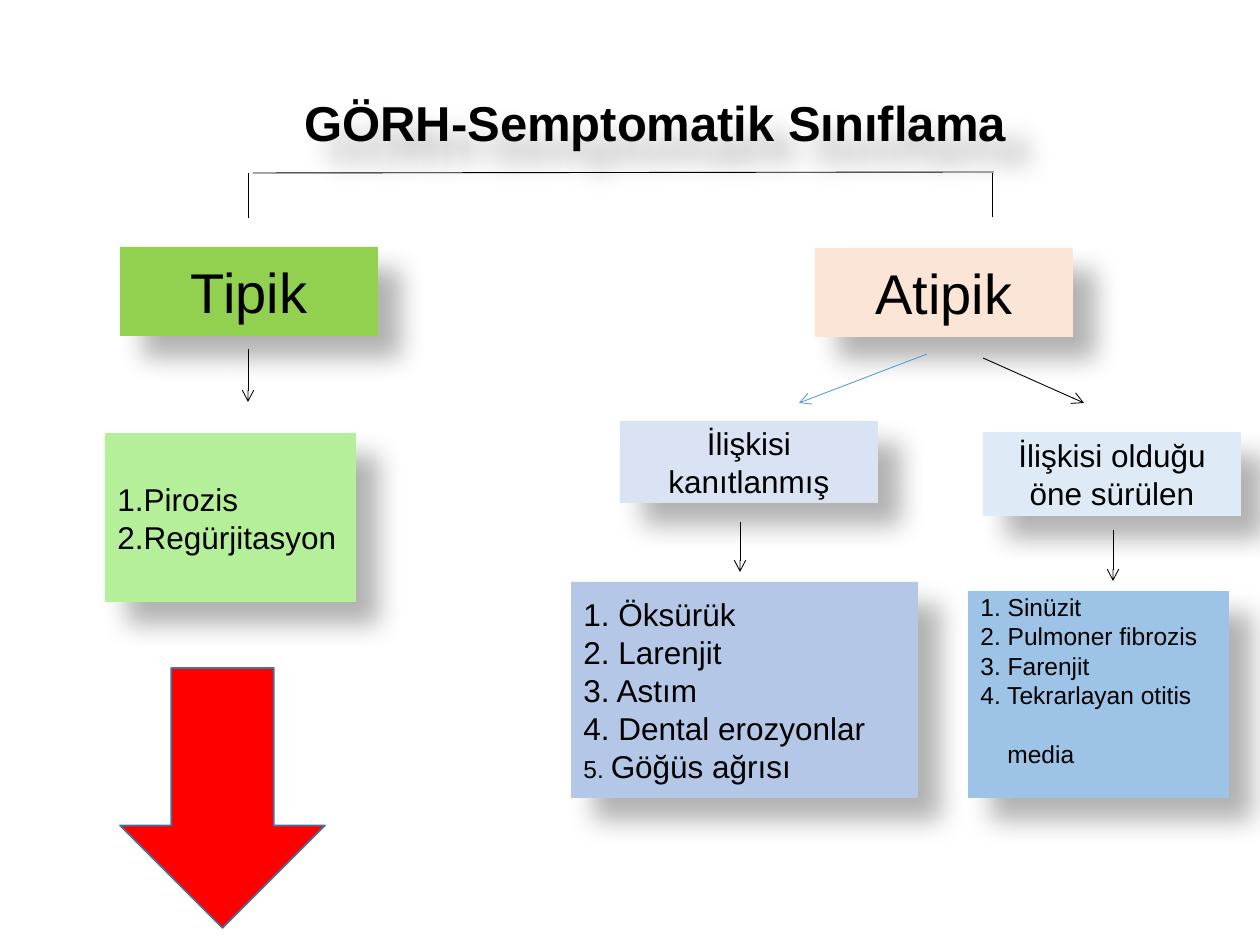
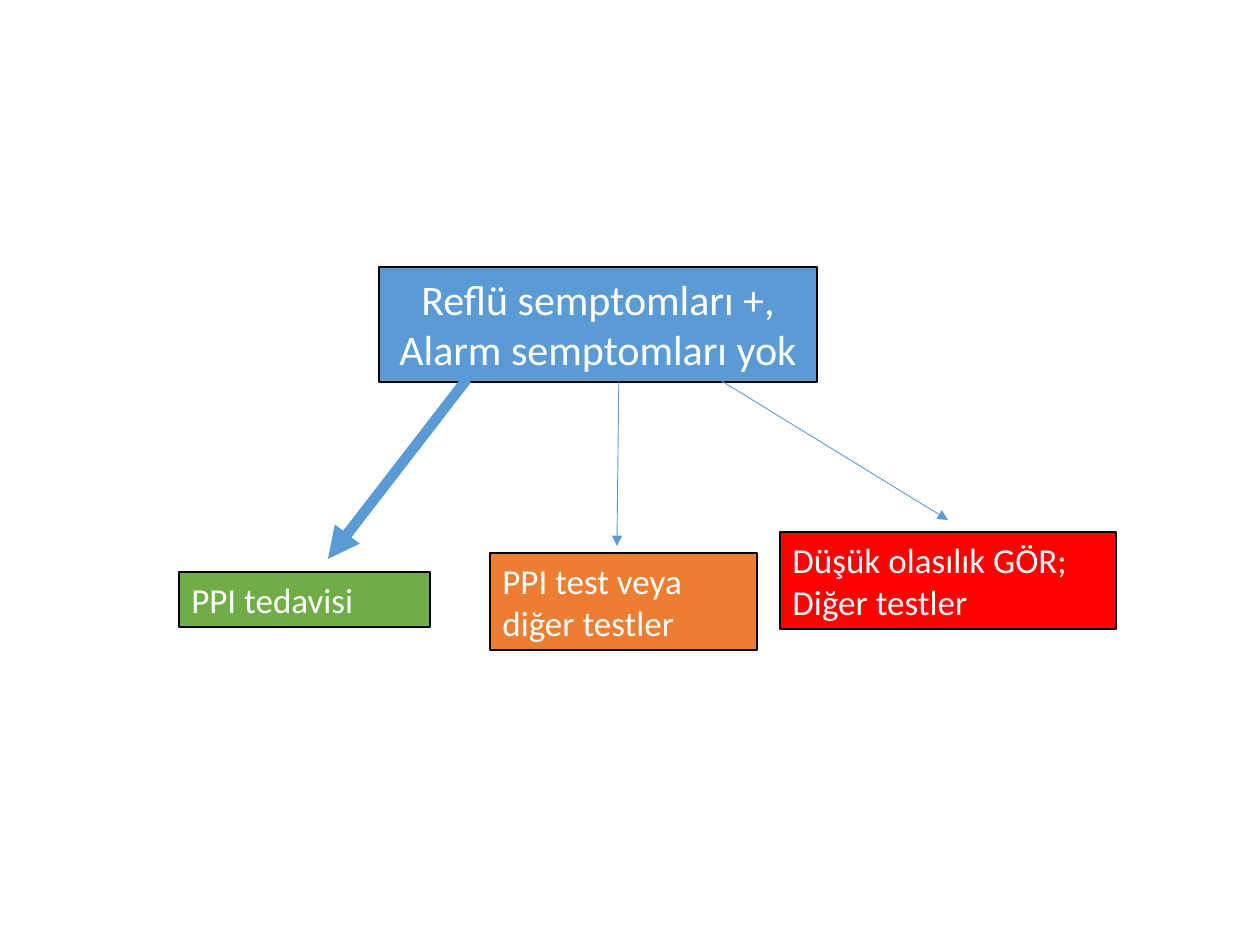
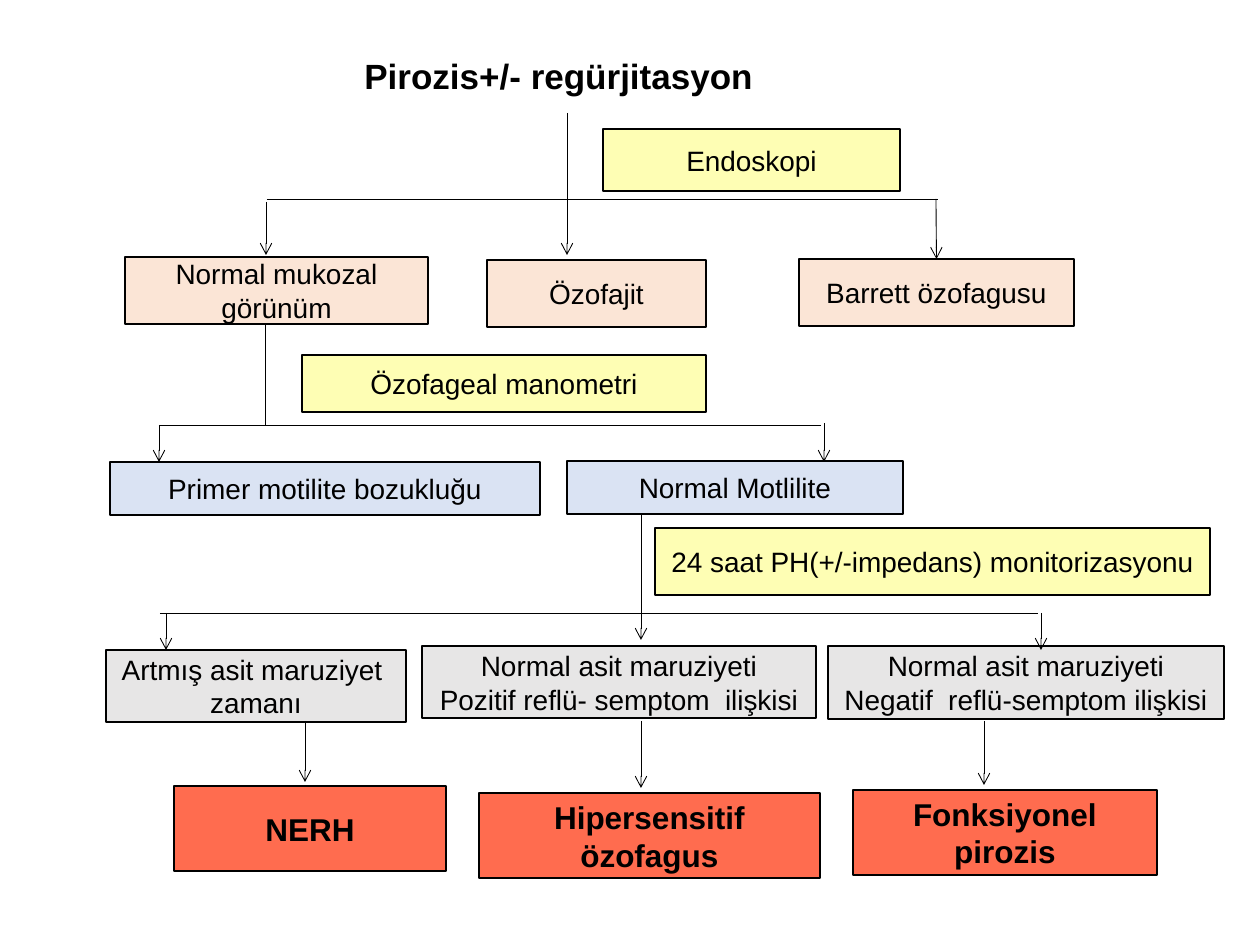
from dataclasses import dataclass

from lxml import etree
from pptx import Presentation
from pptx.dml.color import RGBColor
from pptx.enum.shapes import MSO_CONNECTOR, MSO_SHAPE
from pptx.enum.text import MSO_ANCHOR, MSO_AUTO_SIZE, PP_ALIGN
from pptx.oxml import parse_xml
from pptx.oxml.ns import nsdecls, qn
from pptx.util import Emu, Pt

EMU_PER_PX = 914400 / 126
TOP = 0


@dataclass(frozen=True)
class Theme:
    black: str = "000000"
    white: str = "FFFFFF"
    red: str = "FF0000"
    blue: str = "5B9BD5"
    blue_edge: str = "43739E"
    green: str = "70AD47"
    orange: str = "ED7D31"
    typical: str = "92D050"
    typical_list: str = "B6EF99"
    peach: str = "FBE5D6"
    pale_blue: str = "DAE3F3"
    proven_list: str = "B4C7E7"
    suggested: str = "DEEBF7"
    suggested_list: str = "9DC3E6"
    test: str = "FEFEB4"
    acid: str = "E7E6E6"
    diagnosis: str = "FF6C4F"
    chart_font: str = "Arial"
    treatment_font: str = "Calibri"
    title: int = 28
    category: int = 32
    question: int = 24
    heading: int = 20
    body: int = 18
    step: int = 16
    small: int = 14
    hairline: float = 0.5
    thin: float = 0.75
    edge: float = 1
    thick: float = 6


THEME = Theme()


def px(value):
    return Emu(round(value * EMU_PER_PX))


def color(value):
    return RGBColor.from_string(value)


class FlowDeck:
    def __init__(self):
        self.presentation = Presentation()
        self.presentation.slide_width = px(1260)
        self.presentation.slide_height = px(945)

    def new_slide(self):
        self.slide = self.presentation.slides.add_slide(self.presentation.slide_layouts[6])

    def add_shadow(self, shape):
        """Cast a soft shadow down and to the right."""
        shape.shadow.inherit = False
        effects = shape._element.spPr.find(qn("a:effectLst"))
        effects.append(parse_xml(
            f'<a:outerShdw {nsdecls("a")} blurRad="{Pt(15)}" dist="{Pt(18)}" dir="2700000" '
            f'algn="tl" rotWithShape="0"><a:srgbClr val="{THEME.black}">'
            '<a:alpha val="30000"/></a:srgbClr></a:outerShdw>'))

    def set_text(self, shape, lines, size, font, ink=THEME.black, bold=False, align=PP_ALIGN.LEFT):
        frame = shape.text_frame
        for index, line in enumerate(lines):
            paragraph = frame.paragraphs[0] if index == 0 else frame.add_paragraph()
            paragraph.text = line
            paragraph.alignment = align
            paragraph.font.name = font
            paragraph.font.size = Pt(size)
            paragraph.font.bold = bold
            paragraph.font.color.rgb = color(ink)

    def shape(self, bounds, fill, line=None, width=THEME.edge, kind=MSO_SHAPE.RECTANGLE):
        shape = self.slide.shapes.add_shape(kind, *map(px, bounds))
        shape.shadow.inherit = False
        shape.fill.solid()
        shape.fill.fore_color.rgb = color(fill)
        if line:
            shape.line.color.rgb = color(line)
            shape.line.width = Pt(width)
        else:
            shape.line.fill.background()
        return shape

    def shadow_box(self, bounds, fill, lines, size=THEME.body, align=PP_ALIGN.CENTER):
        box = self.shape(bounds, fill)
        self.add_shadow(box)
        self.set_text(box, lines, size, THEME.chart_font, align=align)
        return box

    def step_box(self, bounds, fill, lines, size=THEME.step, bold=False):
        box = self.shape(bounds, fill, THEME.black)
        self.set_text(box, lines, size, THEME.chart_font, bold=bold, align=PP_ALIGN.CENTER)
        return box

    def treatment_box(self, bounds, fill, lines, size=THEME.heading, align=PP_ALIGN.LEFT):
        box = self.shape(bounds, fill, THEME.black, THEME.thin)
        box.text_frame.vertical_anchor = MSO_ANCHOR.TOP
        box.text_frame.auto_size = MSO_AUTO_SIZE.SHAPE_TO_FIT_TEXT
        self.set_text(box, lines, size, THEME.treatment_font, THEME.white, align=align)

    def title(self, bounds, text, size, wrap=True):
        box = self.slide.shapes.add_textbox(*map(px, bounds))
        box.text_frame.word_wrap = wrap
        box.text_frame.auto_size = MSO_AUTO_SIZE.SHAPE_TO_FIT_TEXT
        self.set_text(box, [text], size, THEME.chart_font, bold=True)
        return box

    def line(self, ends, head=None, ink=THEME.black, width=THEME.hairline):
        connector = self.slide.shapes.add_connector(MSO_CONNECTOR.STRAIGHT, *map(px, ends))
        connector.line.color.rgb = color(ink)
        connector.line.width = Pt(width)
        properties = connector._element.spPr
        if head:
            etree.SubElement(properties.find(qn("a:ln")), qn("a:tailEnd"), type=head)
        etree.SubElement(properties, qn("a:effectLst"))
        return connector

    def down_arrow(self, x, top, bottom):
        return self.line((x, top, x, bottom), "arrow")


def build_symptom_classes(deck):
    deck.new_slide()
    deck.line((253, 173, 994, 172))
    deck.line((248, 173, 248, 218))
    deck.line((992, 173, 992, 217))

    deck.shadow_box((120, 247, 258, 89), THEME.typical, ["Tipik"], THEME.category)
    deck.shadow_box((815, 248, 258, 89), THEME.peach, ["Atipik"], THEME.category)
    deck.shadow_box((620, 421, 258, 82), THEME.pale_blue, ["İlişkisi kanıtlanmış"])
    deck.shadow_box((983, 432, 258, 84), THEME.suggested, ["İlişkisi olduğu öne sürülen"])
    deck.shadow_box((105, 433, 251, 169), THEME.typical_list,
                    ["1.Pirozis", "2.Regürjitasyon"], align=PP_ALIGN.LEFT)

    proven = deck.shadow_box(
        (571, 582, 347, 216), THEME.proven_list,
        ["1. Öksürük", "2. Larenjit", "3. Astım", "4. Dental erozyonlar", "5. "],
        align=PP_ALIGN.LEFT)
    last = proven.text_frame.paragraphs[-1]
    last.runs[0].font.size = Pt(THEME.small)
    last.add_run().text = "Göğüs ağrısı"

    suggested = deck.shadow_box(
        (968, 591, 261, 207), THEME.suggested_list,
        ["1. Sinüzit", "2. Pulmoner fibrozis", "3. Farenjit", "4. Tekrarlayan otitis", "media"],
        THEME.small, PP_ALIGN.LEFT)
    suggested.text_frame.vertical_anchor = MSO_ANCHOR.TOP
    suggested.text_frame.margin_top = px(1)
    continuation = suggested.text_frame.paragraphs[-1]
    continuation.space_before = Pt(16.5)
    continuation._p.get_or_add_pPr().set("marL", str(px(27)))

    for x, top, bottom in ((248, 349, 402), (740, 522, 572), (1113, 530, 581)):
        deck.down_arrow(x, top, bottom)
    deck.line((983, 358, 1084, 403), "arrow")
    deck.line((927, 354, 799, 403), "arrow", THEME.blue)

    title = deck.title((292, 86, 735, 72), "GÖRH-Semptomatik Sınıflama", THEME.title, wrap=False)
    deck.add_shadow(title)
    deck.shape((120, 668, 205, 260), THEME.red, THEME.blue_edge, kind=MSO_SHAPE.DOWN_ARROW)


def build_treatment_choice(deck):
    deck.new_slide()
    deck.treatment_box((379, 267, 438, 115), THEME.blue,
                       ["Reflü semptomları +,", "Alarm semptomları yok"],
                       THEME.question, PP_ALIGN.CENTER)
    deck.treatment_box((179, 572, 251, 55), THEME.green, ["PPI tedavisi"])
    deck.treatment_box((490, 553, 267, 97), THEME.orange, ["PPI test veya", "diğer testler"])
    deck.treatment_box((780, 532, 336, 97), THEME.red, ["Düşük olasılık GÖR;", "Diğer testler"])
    for ends, width in (((467, 379, 328, 559), THEME.thick),
                        ((619, 364, 617, 546), THEME.hairline),
                        ((707, 372, 948, 520), THEME.hairline)):
        deck.line(ends, "triangle", THEME.blue, width)


def build_diagnostic_tree(deck):
    deck.new_slide()
    deck.title((352, 48, 655, 55), "Pirozis+/- regürjitasyon", THEME.heading)

    for bounds, fill, lines in (
        ((603, 129, 297, 62), THEME.test, ["Endoskopi"]),
        ((302, 355, 404, 57), THEME.test, ["Özofageal manometri"]),
        ((655, 528, 555, 67), THEME.test, ["24 saat PH(+/-impedans) monitorizasyonu"]),
        ((125, 257, 303, 67), THEME.peach, ["Normal mukozal görünüm"]),
        ((487, 260, 219, 67), THEME.peach, ["Özofajit"]),
        ((110, 462, 430, 53), THEME.pale_blue, ["Primer motilite bozukluğu"]),
        ((567, 461, 336, 53), THEME.pale_blue, ["Normal Motlilite"]),
        ((106, 650, 300, 72), THEME.acid, ["Artmış asit maruziyet ", "zamanı"]),
        ((422, 646, 394, 72), THEME.acid,
         ["Normal asit maruziyeti", "Pozitif reflü- semptom  ilişkisi"]),
        ((828, 646, 396, 73), THEME.acid,
         ["Normal asit maruziyeti", "Negatif  reflü-semptom ilişkisi"]),
    ):
        deck.step_box(bounds, fill, lines)
    barrett = deck.step_box((799, 259, 275, 67), THEME.peach, ["Barrett özofagusu"])

    for bounds, name in (((174, 786, 272, 85), "NERH"),
                         ((479, 793, 341, 85), "Hipersensitif özofagus"),
                         ((853, 790, 304, 85), "Fonksiyonel pirozis")):
        deck.step_box(bounds, THEME.diagnosis, [name], THEME.body, bold=True)

    for left, right, y in ((267, 938, 199), (159, 821, 425), (160, 1038, 613)):
        deck.line((left, y, right, y))
    deck.line((265, 324, 265, 425))

    for x, top, bottom in (
        (567, 113, 255), (266, 202, 255),
        (159, 425, 462), (824, 423, 462),
        (166, 613, 650), (641, 515, 640), (1041, 613, 650),
        (305, 721, 782), (641, 721, 788), (984, 721, 785),
    ):
        deck.down_arrow(x, top, bottom)
    deck.down_arrow(936, 199, 259).end_connect(barrett, TOP)


def main():
    deck = FlowDeck()
    build_symptom_classes(deck)
    build_treatment_choice(deck)
    build_diagnostic_tree(deck)
    deck.presentation.save("out.pptx")


if __name__ == "__main__":
    main()
